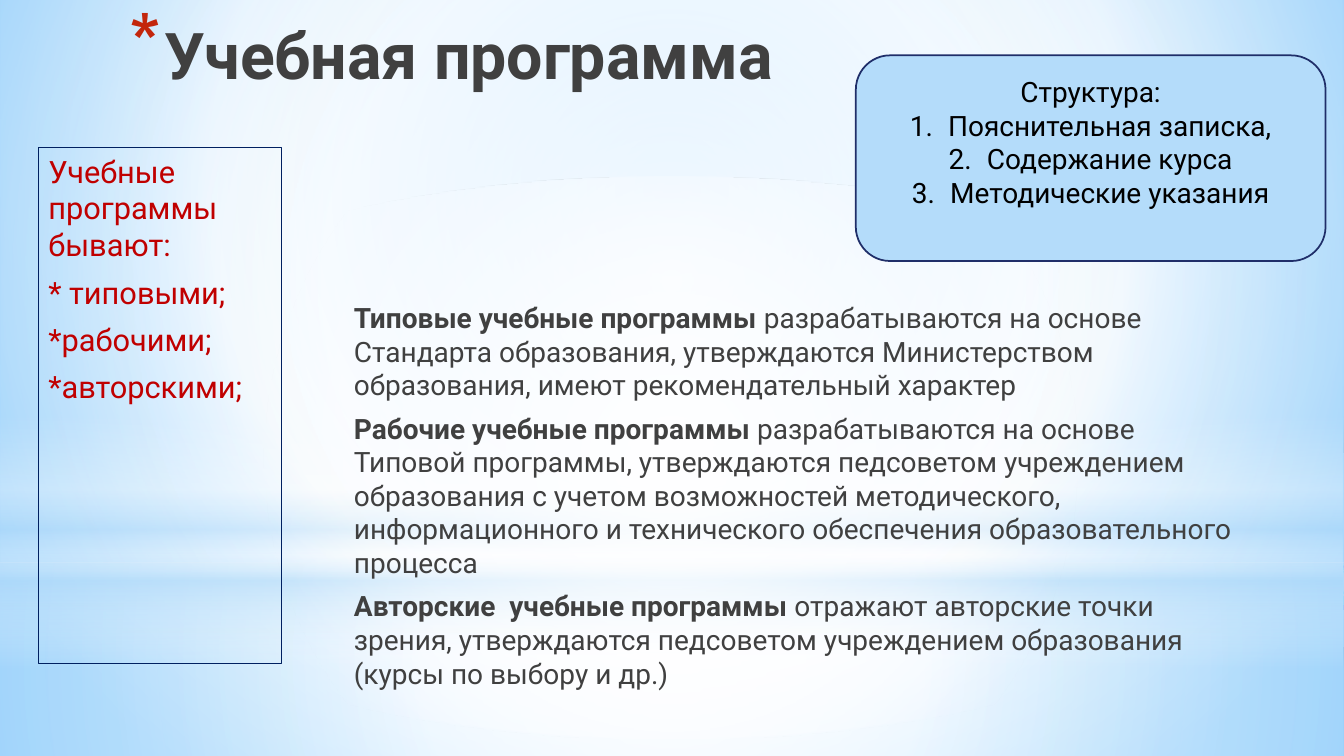
"""Build the slide on curriculum programmes, their kinds and structure."""
from dataclasses import dataclass

from lxml import etree
from pptx import Presentation
from pptx.dml.color import RGBColor
from pptx.enum.shapes import MSO_SHAPE
from pptx.enum.text import MSO_ANCHOR, MSO_AUTO_SIZE, PP_ALIGN
from pptx.oxml.ns import qn
from pptx.util import Inches, Pt

RECTANGLE, ROUNDED, ELLIPSE = MSO_SHAPE.RECTANGLE, MSO_SHAPE.ROUNDED_RECTANGLE, MSO_SHAPE.OVAL
TOP, MIDDLE = MSO_ANCHOR.TOP, MSO_ANCHOR.MIDDLE
LEFT, CENTER, RIGHT = PP_ALIGN.LEFT, PP_ALIGN.CENTER, PP_ALIGN.RIGHT
NO_AUTOFIT = MSO_AUTO_SIZE.NONE

WIDTH, HEIGHT = Inches(13.333), Inches(7.5)
FONT = "Roboto"
TWO_CONTENT = 3
COLORS = {
    "white": "FFFFFF", "haze": "B4DCFA", "sky": "9ED5FF", "azure": "5BB9FF",
    "text": "404040", "black": "000000", "red": "C00000", "asterisk": "C3260C",
    "frame": "002060", "outline": "1F2E69",
}


@dataclass(frozen=True)
class Area:
    """Position and size in percent of the slide."""
    left: float
    top: float
    width: float
    height: float

    def place(self, shape) -> None:
        shape.left, shape.width = (int(WIDTH * share / 100) for share in (self.left, self.width))
        shape.top, shape.height = (int(HEIGHT * share / 100) for share in (self.top, self.height))


@dataclass(frozen=True)
class Gradient:
    """Stops as position, colour and opacity, with a focus or a linear angle."""
    stops: tuple[tuple[int, str, int], ...]
    focus: tuple[int, int, int, int] | None = (50, 50, 50, 50)
    angle: int = 90


@dataclass(frozen=True)
class Glow:
    """A translucent background layer."""
    outline: MSO_SHAPE
    area: Area
    gradient: Gradient


@dataclass(frozen=True)
class Definition:
    """A kind of programme and its explanation."""
    term: str
    meaning: str


SKY = Gradient(((0, "sky", 100), (60, "white", 100), (100, "azure", 100)), (20, 10, 20, 60))
GLOWS = (
    Glow(RECTANGLE, Area(0, 74.4, 100, 25.6),
         Gradient(((0, "white", 91), (37, "white", 76), (100, "haze", 79)))),
    Glow(RECTANGLE, Area(0, 0, 100, 74.4),
         Gradient(((0, "white", 89), (48, "white", 62), (100, "haze", 79)))),
    Glow(RECTANGLE, Area(0, 54.93, 100, 33.33),
         Gradient(((0, "white", 0), (29, "white", 30), (45, "haze", 40),
                   (55, "white", 26), (65, "haze", 60), (100, "white", 0)), None)),
    Glow(ELLIPSE, Area(0, 23.33, 100, 74.4),
         Gradient(((0, "white", 100), (56, "white", 0)))),
)
TITLE_AREA = Area(-12.98, 1.33, 71.25, 16.67)
KINDS_AREA = Area(2.85, 19.47, 18.08, 68.27)
DEFINITIONS_AREA = Area(25.58, 39.07, 66.9, 50.13)
STRUCTURE_AREA = Area(63.68, 7.33, 34.95, 27.2)

KINDS = ("Учебные программы бывают:", "* типовыми;", "*рабочими;", "*авторскими;")
DEFINITIONS = (
    Definition("Типовые учебные программы ",
               "разрабатываются на основе Стандарта образования, утверждаются "
               "Министерством образования, имеют рекомендательный характер"),
    Definition("Рабочие учебные программы ",
               "разрабатываются на основе Типовой программы, утверждаются педсоветом "
               "учреждением образования с учетом возможностей методического, "
               "информационного и технического обеспечения образовательного процесса"),
    Definition("Авторские  учебные программы ",
               "отражают авторские точки зрения, утверждаются педсоветом учреждением "
               "образования (курсы по выбору и др.)"),
)
STRUCTURE = ("Структура:", "Пояснительная записка,", "Содержание курса", "Методические указания")


def rgb(color: str) -> RGBColor:
    return RGBColor.from_string(COLORS[color])


def add_tag(parent, tag: str, **attributes):
    return etree.SubElement(parent, qn(tag), {key: str(value) for key, value in attributes.items()})


def paint_gradient(owner, gradient: Gradient) -> None:
    owner.fill.gradient()


def fill_gradient(fill, element, gradient: Gradient) -> None:
    fill.gradient()
    node = next(element.iter(qn("a:gradFill")))
    for child in list(node):
        node.remove(child)
    stops = add_tag(node, "a:gsLst")
    for position, color, opacity in gradient.stops:
        stop = add_tag(stops, "a:gs", pos=position * 1000)
        tint = add_tag(stop, "a:srgbClr", val=COLORS[color])
        if opacity < 100:
            add_tag(tint, "a:alpha", val=opacity * 1000)
    if gradient.focus is None:
        add_tag(node, "a:lin", ang=gradient.angle * 60000, scaled=0)
    else:
        circle = add_tag(node, "a:path", path="circle")
        sides = zip("ltrb", gradient.focus)
        add_tag(circle, "a:fillToRect", **{side: share * 1000 for side, share in sides})


def add_glow(slide, glow: Glow, depth: int) -> None:
    layer = slide.shapes.add_shape(glow.outline, 0, 0, WIDTH, HEIGHT)
    glow.area.place(layer)
    layer.shadow.inherit = False
    layer.line.fill.background()
    fill_gradient(layer.fill, layer.element, glow.gradient)
    slide.shapes.element.insert(2 + depth, layer.element)


def format_runs(paragraph, size: int, color: str, align: PP_ALIGN) -> None:
    paragraph.alignment = align
    for run in paragraph.runs:
        run.font.name, run.font.size = FONT, Pt(size)
        run.font.color.rgb = rgb(color)


def indent(paragraph, hanging: float):
    properties = paragraph.element.get_or_add_pPr() if hasattr(paragraph, "element") \
        else paragraph._p.get_or_add_pPr()
    properties.set("marL", str(Inches(hanging)))
    properties.set("indent", str(-Inches(hanging)))
    return properties


def prepare_frame(shape, area: Area, anchor: MSO_ANCHOR):
    area.place(shape)
    frame = shape.text_frame
    frame.word_wrap, frame.auto_size, frame.vertical_anchor = True, NO_AUTOFIT, anchor
    return frame


def format_list(frame, size: int, color: str) -> None:
    for paragraph in frame.paragraphs:
        format_runs(paragraph, size, color, LEFT)
        paragraph.space_before, paragraph.space_after = Pt(size * 0.2), Pt(3)
        add_tag(indent(paragraph, 0), "a:buNone")


def fill_title(title) -> None:
    frame = prepare_frame(title, TITLE_AREA, TOP)
    frame.text = "Учебная программа"
    heading = frame.paragraphs[0]
    format_runs(heading, 46, "text", RIGHT)
    heading.runs[0].font.bold = True
    properties = indent(heading, 0.35)
    add_tag(add_tag(properties, "a:buClr"), "a:srgbClr", val=COLORS["asterisk"])
    add_tag(properties, "a:buSzPct", val=128000)
    add_tag(properties, "a:buChar", char="*")


def fill_kinds(kinds) -> None:
    frame = prepare_frame(kinds, KINDS_AREA, TOP)
    frame.text = "\n".join(KINDS)
    format_list(frame, 22, "red")
    kinds.line.color.rgb, kinds.line.width = rgb("frame"), Pt(0.75)


def fill_definitions(definitions) -> None:
    frame = prepare_frame(definitions, DEFINITIONS_AREA, TOP)
    frame.text = "\n".join(definition.term for definition in DEFINITIONS)
    for paragraph, definition in zip(frame.paragraphs, DEFINITIONS):
        paragraph.runs[0].font.bold = True
        paragraph.add_run().text = definition.meaning
    format_list(frame, 20, "text")


def add_structure(slide) -> None:
    structure = slide.shapes.add_shape(ROUNDED, 0, 0, WIDTH, HEIGHT)
    structure.shadow.inherit = False
    structure.fill.solid()
    structure.fill.fore_color.rgb = rgb("haze")
    structure.line.color.rgb, structure.line.width = rgb("outline"), Pt(1.25)
    frame = prepare_frame(structure, STRUCTURE_AREA, MIDDLE)
    frame.margin_bottom = int(HEIGHT * 0.05)
    frame.text = "\n".join(STRUCTURE)
    for number, paragraph in enumerate(frame.paragraphs):
        format_runs(paragraph, 20, "black", CENTER)
        if number:
            add_tag(indent(paragraph, 0.38), "a:buAutoNum", type="arabicPeriod")


def main() -> None:
    deck = Presentation()
    deck.slide_width, deck.slide_height = WIDTH, HEIGHT
    slide = deck.slides.add_slide(deck.slide_layouts[TWO_CONTENT])
    fill_gradient(slide.background.fill, slide.element, SKY)
    for depth, glow in enumerate(GLOWS):
        add_glow(slide, glow, depth)
    fill_title(slide.shapes.title)
    fill_kinds(slide.placeholders[1])
    fill_definitions(slide.placeholders[2])
    add_structure(slide)
    deck.save("out.pptx")


if __name__ == "__main__":
    main()
